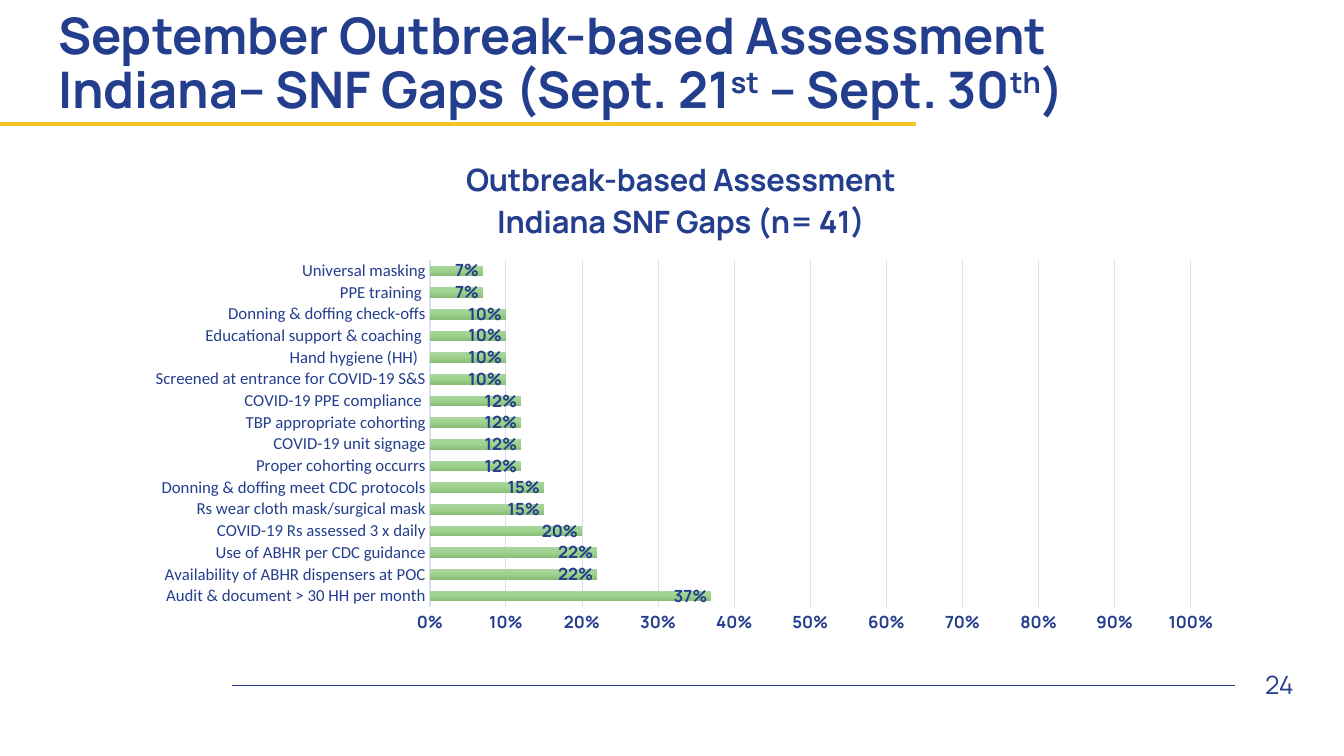
from pptx import Presentation
from pptx.chart.data import CategoryChartData
from pptx.dml.color import RGBColor
from pptx.enum.chart import XL_CHART_TYPE, XL_LABEL_POSITION, XL_TICK_MARK
from pptx.enum.shapes import MSO_CONNECTOR
from pptx.enum.text import MSO_ANCHOR, PP_ALIGN
from pptx.oxml import parse_xml
from pptx.oxml.ns import nsdecls, qn
from pptx.util import Inches, Pt
from lxml.etree import SubElement

NAVY, GOLD, PALE = "243E8E", "F7C327", "D7DFF5"
DARK = [(0, "74B35C"), (50, "5EAD38"), (100, "529F2D")]
LIGHT = [(0, "AAD59D"), (50, "9DD28D"), (100, "8ABE79")]
GAPS = [
    ("Audit & document > 30 HH per month", 0.37),
    ("Availability of ABHR dispensers at POC", 0.22),
    ("Use of ABHR per CDC guidance", 0.22),
    ("COVID-19 Rs assessed 3 x daily", 0.2),
    ("Rs wear cloth mask/surgical mask", 0.15),
    ("Donning & doffing meet CDC protocols", 0.15),
    ("Proper cohorting occurrs", 0.12),
    ("COVID-19 unit signage", 0.12),
    ("TBP appropriate cohorting", 0.12),
    ("COVID-19 PPE compliance ", 0.12),
    ("Screened at entrance for COVID-19 S&S", 0.1),
    ("Hand hygiene (HH)  ", 0.1),
    ("Educational support & coaching ", 0.1),
    ("Donning & doffing check-offs", 0.1),
    ("PPE training ", 0.07),
    ("Universal masking", 0.07),
]


def color(code):
    return RGBColor.from_string(code)


class Deck:
    def __init__(self, face, ink):
        self.face, self.ink = face, ink
        self.show = Presentation()
        self.show.slide_width, self.show.slide_height = Inches(13.33), Inches(7.5)
        self.slide = self.show.slides.add_slide(self.show.slide_layouts[6])

    def style(self, font, size, bold=False, face=None):
        font.name, font.size, font.bold = face or self.face, Pt(size), bold
        font.color.rgb = color(self.ink)

    def rule(self, left, right, y, code, width):
        line = self.slide.shapes.add_connector(
            MSO_CONNECTOR.STRAIGHT, Inches(left), Inches(y), Inches(right), Inches(y))
        line.line.color.rgb, line.line.width = color(code), Pt(width)
        SubElement(line._element.spPr, qn("a:effectLst"))

    def text(self, box, parts, size, bold=False, align=PP_ALIGN.LEFT, pitch=1.0):
        frame = self.slide.shapes.add_textbox(*map(Inches, box)).text_frame
        frame.word_wrap, frame.vertical_anchor = True, MSO_ANCHOR.MIDDLE
        frame.text = parts[0]
        line = frame.paragraphs[0]
        line.alignment, line.line_spacing = align, pitch
        for spot, part in enumerate(parts[1:], 1):
            run = line.add_run()
            run.text = part
            if spot % 2:
                run.font._element.set("baseline", "30000")
        for run in line.runs:
            self.style(run.font, size, bold)

    def place(self, parent, spots, inner=False):
        old = parent.find(qn("c:layout"))
        if old is not None:
            parent.remove(old)
        target = '<c:layoutTarget val="inner"/>' if inner else ""
        modes = "".join(f'<c:{key}Mode val="edge"/>' for key in "xy")
        sizes = "".join(f'<c:{key} val="{val}"/>' for key, val in zip("xywh", spots))
        node = parse_xml(f'<c:layout {nsdecls("c")}><c:manualLayout>{target}{modes}{sizes}'
                         '</c:manualLayout></c:layout>')
        parent.insert(0 if inner else 1, node)

    def fade(self, series, stops):
        marks = "".join(f'<a:gs pos="{pos * 1000}"><a:srgbClr val="{code}"/></a:gs>'
                        for pos, code in stops)
        series._element.get_or_add_spPr().insert(0, parse_xml(
            f'<a:gradFill {nsdecls("a")}><a:gsLst>{marks}</a:gsLst>'
            '<a:lin ang="5400000" scaled="0"/></a:gradFill>'))

    def bars(self, box, title, rows):
        data = CategoryChartData(number_format="0%")
        data.categories = [name for name, share in rows]
        data.add_series("Series 1", [])
        data.add_series("Series 2", [share for name, share in rows])
        chart = self.slide.shapes.add_chart(
            XL_CHART_TYPE.BAR_CLUSTERED, *map(Inches, box), data).chart
        self.style(chart.font, 12, True)
        chart.has_legend = False
        frame = chart.chart_title.text_frame
        frame.text = title
        for line in frame.paragraphs:
            for run in line.runs:
                self.style(run.font, 22, True)
        chart.chart_title.include_in_layout = False
        self.place(chart.chart_title._element, (0.3, 0.03))
        self.place(chart._chartSpace.chart.plotArea, (0.27, 0.24, 0.69, 0.69), True)
        plot = chart.plots[0]
        plot.gap_width, plot.overlap, plot.vary_by_categories = 115, -20, False
        blank, gaps = plot.series
        blank._element.remove(blank._element.find(qn("c:val")))
        self.fade(blank, DARK)
        self.fade(gaps, LIGHT)
        tags = gaps.data_labels
        tags.show_value, tags.position = True, XL_LABEL_POSITION.INSIDE_END
        tags.number_format, tags.number_format_is_linked = "0%", False
        self.style(tags.font, 12, True)
        self.axes(chart.category_axis, chart.value_axis)

    def axes(self, names, shares):
        for axis in (names, shares):
            axis.major_tick_mark = axis.minor_tick_mark = XL_TICK_MARK.NONE
        self.style(names.tick_labels.font, 12, face="Calibri")
        names.format.line.color.rgb, names.format.line.width = color(PALE), Pt(1)
        self.style(shares.tick_labels.font, 12, True)
        shares.tick_labels.number_format = "0%"
        shares.tick_labels.number_format_is_linked = False
        shares.minimum_scale, shares.maximum_scale, shares.major_unit = 0, 1, 0.1
        shares.format.line.fill.background()
        grid = shares.major_gridlines.format.line
        grid.color.rgb, grid.width = color(PALE), Pt(0.75)


def main():
    deck = Deck("Manrope", NAVY)
    deck.rule(2.3, 12.25, 6.8, NAVY, 1)
    deck.rule(-0.11, 9.09, 1.23, GOLD, 3)
    deck.text((0.48, 0.23, 11.94, 0.83),
              ["September Outbreak-based Assessment\vIndiana– SNF Gaps (Sept. 21",
               "st", " – Sept. 30", "th", ")"], 36, True, pitch=0.9)
    deck.text((12.25, 6.59, 0.68, 0.4), ["24"], 18, align=PP_ALIGN.RIGHT)
    deck.bars((1.31, 1.38, 10.94, 4.99),
              "Outbreak-based Assessment\nIndiana SNF Gaps (n= 41)", GAPS)
    deck.show.save("out.pptx")


if __name__ == "__main__":
    main()
